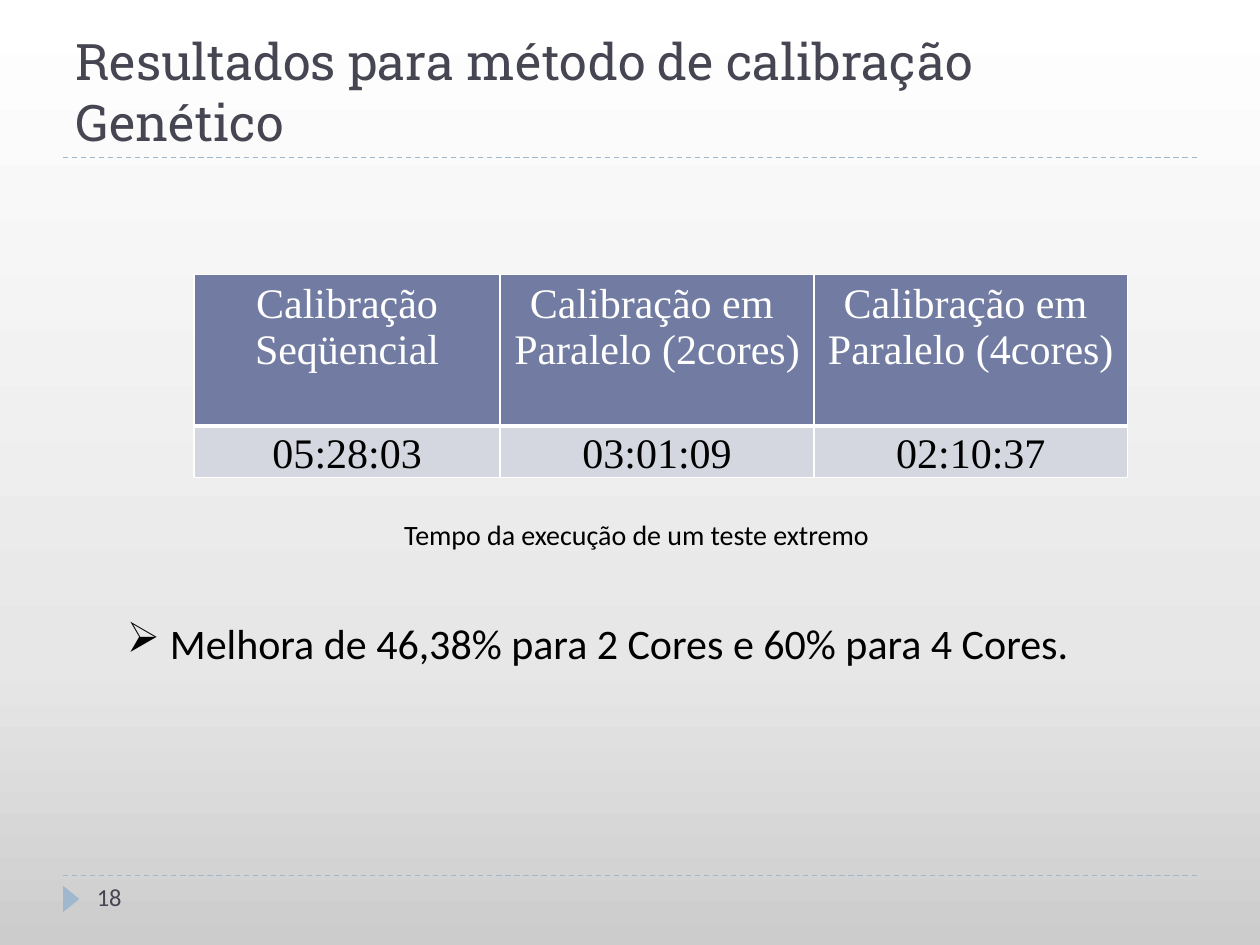
from copy import deepcopy

from lxml.etree import SubElement
from pptx import Presentation
from pptx.dml.color import RGBColor
from pptx.enum.dml import MSO_LINE
from pptx.enum.shapes import MSO_CONNECTOR, MSO_SHAPE
from pptx.enum.text import MSO_ANCHOR, PP_ALIGN
from pptx.oxml.ns import qn
from pptx.util import Inches, Pt

SLATE = RGBColor(0x46, 0x46, 0x53)
PALE_BLUE = RGBColor(0x9F, 0xB8, 0xCD)
HEADER_BLUE = RGBColor(0x72, 0x7C, 0xA3)
ROW_GREY = RGBColor(0xD5, 0xD7, 0xE0)
WHITE = RGBColor(0xFF, 0xFF, 0xFF)
BLACK = RGBColor(0, 0, 0)
BACKGROUND = [(0, RGBColor(0xCC, 0xCC, 0xCC)), (0.3, RGBColor(0xE7, 0xE7, 0xE7)), (1, WHITE)]

HEADERS = ["Calibração Seqüencial", "Calibração em \nParalelo (2cores)",
           "Calibração em \nParalelo (4cores)"]
TIMES = ["05:28:03", "03:01:09", "02:10:37"]


def write(frame, text, font="Calibri", size=24, color=BLACK,
          align=PP_ALIGN.LEFT, bullet=None):
    """Fill a text frame, one paragraph for each line of text."""
    for index, line in enumerate(text.split("\n")):
        para = frame.add_paragraph() if index else frame.paragraphs[0]
        para.alignment = align
        if bullet:
            SubElement(para._p.get_or_add_pPr(), qn("a:buChar"), char=bullet)
        span = para.add_run()
        span.text = line
        span.font.name = font
        span.font.size = Pt(size)
        span.font.color.rgb = color


def border(cell, side, width):
    """Draw one white cell border; side is L, R, T or B."""
    line = SubElement(cell._tc.get_or_add_tcPr(), qn("a:ln" + side), w=str(Pt(width)))
    fill = SubElement(line, qn("a:solidFill"))
    SubElement(fill, qn("a:srgbClr"), val=str(WHITE))


class SlideBuilder:
    def __init__(self, deck):
        self.page = deck.slides.add_slide(deck.slide_layouts[5])

    def background(self, stops):
        fill = self.page.background.fill
        fill.gradient()
        fill.gradient_angle = 90
        stop_list = self.page._element.xpath(".//a:gsLst")[0]
        stop_list.append(deepcopy(stop_list[-1]))
        for stop, (position, color) in zip(fill.gradient_stops, stops):
            stop.position = position
            stop.color.rgb = color

    def title(self, text, left, top, width, height):
        box = self.page.shapes.title
        box.left, box.top = Inches(left), Inches(top)
        box.width, box.height = Inches(width), Inches(height)
        box.text_frame.vertical_anchor = MSO_ANCHOR.BOTTOM
        write(box.text_frame, text, font="Roboto Slab", size=28.8, color=SLATE)

    def rule(self, top):
        line = self.page.shapes.add_connector(
            MSO_CONNECTOR.STRAIGHT, Inches(0.5), Inches(top), Inches(9.5), Inches(top))
        line.line.color.rgb = PALE_BLUE
        line.line.width = Pt(0.75)
        line.line.dash_style = MSO_LINE.DASH
        SubElement(line._element.spPr, qn("a:effectLst"))

    def marker(self, left, top, width, height):
        shape = self.page.shapes.add_shape(
            MSO_SHAPE.ISOSCELES_TRIANGLE, Inches(left), Inches(top),
            Inches(width), Inches(height))
        shape.rotation = 90
        shape.shadow.inherit = False
        shape.fill.solid()
        shape.fill.fore_color.rgb = PALE_BLUE
        shape.line.fill.background()

    def text(self, text, left, top, width, height, wrap=False, **style):
        box = self.page.shapes.add_textbox(
            Inches(left), Inches(top), Inches(width), Inches(height))
        box.text_frame.word_wrap = wrap
        write(box.text_frame, text, **style)

    def table(self, rows, left, top, widths, heights):
        table = self.page.shapes.add_table(
            len(rows), len(widths), Inches(left), Inches(top),
            Inches(sum(widths)), Inches(sum(heights))).table
        for column, width in zip(table.columns, widths):
            column.width = Inches(width)
        for index, (values, height) in enumerate(zip(rows, heights)):
            table.rows[index].height = Inches(height)
            for cell, value in zip(table.rows[index].cells, values):
                self.cell(cell, value, header=index == 0)

    def cell(self, cell, value, header):
        write(cell.text_frame, value, font="Times New Roman",
              color=WHITE if header else BLACK, align=PP_ALIGN.CENTER)
        if not header:
            cell.vertical_anchor = MSO_ANCHOR.BOTTOM
            cell.margin_left = cell.margin_right = cell.margin_top = Inches(0.01)
            cell.margin_bottom = 0
        # Borders come before the fill in the cell properties
        for side in "LRTB":
            thick = side == ("B" if header else "T")
            border(cell, side, 3 if thick else 1)
        cell.fill.solid()
        cell.fill.fore_color.rgb = HEADER_BLUE if header else ROW_GREY


def main():
    deck = Presentation()
    deck.slide_width, deck.slide_height = Inches(10), Inches(7.5)
    slide = SlideBuilder(deck)

    # Frame of the page
    slide.background(BACKGROUND)
    for top in (6.95, 1.25):
        slide.rule(top)
    slide.marker(0.46, 7.07, 0.21, 0.13)
    slide.title("Resultados para método de calibração Genético", 0.5, 0.17, 9, 1.08)

    # Run times and their caption
    slide.table([HEADERS, TIMES], 1.54, 2.18, widths=[2.43, 2.49, 2.49], heights=[1.2, 0.41])
    slide.text("Tempo da execução de um teste extremo", 3.11, 4.06, 4, 0.37, size=16)

    # Conclusion and page number
    slide.text(" Melhora de 46,38% para 2 Cores e 60% para 4 Cores.",
               0.91, 4.85, 7.93, 0.5, bullet="➢")
    slide.text("18", 0.67, 6.95, 2.17, 0.4, wrap=True, size=14, color=SLATE)

    deck.save("out.pptx")


if __name__ == "__main__":
    main()
